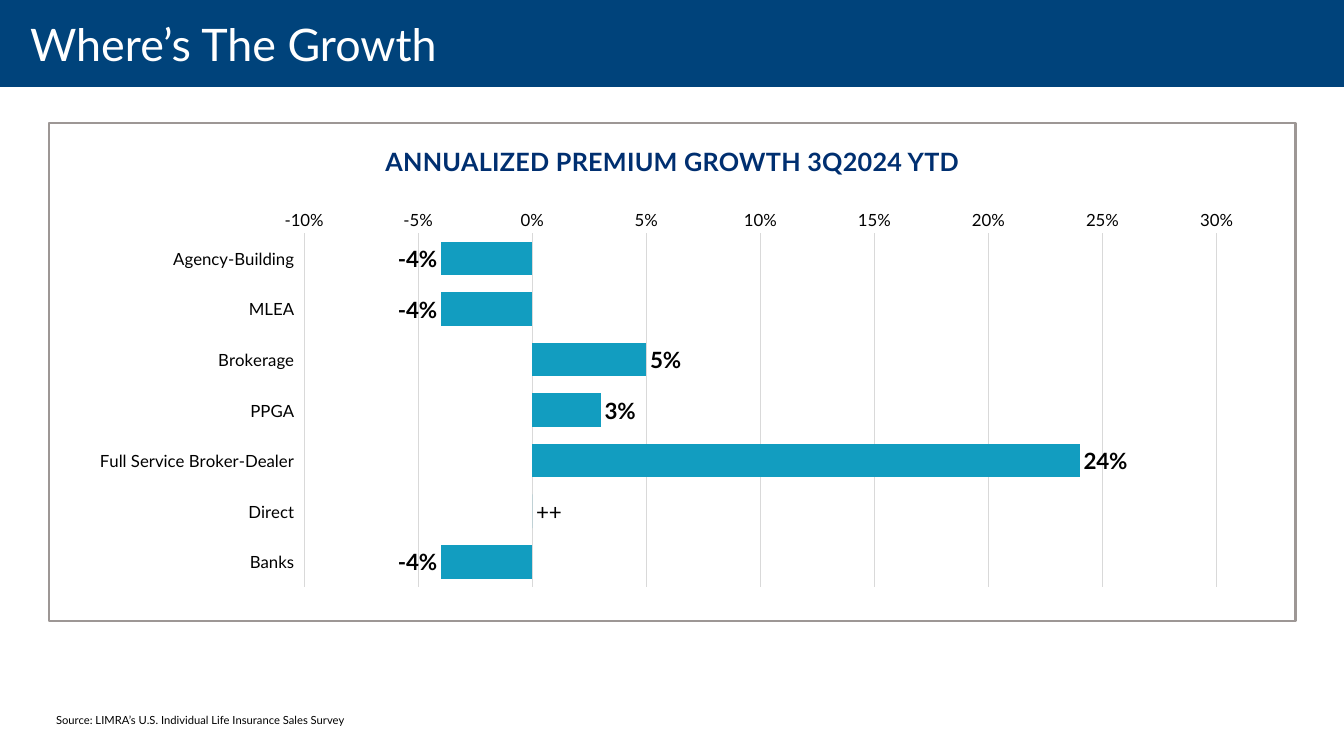
from lxml import etree
from pptx import Presentation
from pptx.chart.data import CategoryChartData
from pptx.dml.color import RGBColor
from pptx.enum.chart import XL_CHART_TYPE as Kind, XL_LABEL_POSITION as Spot
from pptx.enum.chart import XL_TICK_LABEL_POSITION as Place, XL_TICK_MARK as Tick
from pptx.enum.shapes import MSO_SHAPE as Shape
from pptx.enum.text import MSO_ANCHOR as Anchor, MSO_AUTO_SIZE as Fit, PP_ALIGN as Align
from pptx.oxml import parse_xml
from pptx.oxml.ns import nsdecls
from pptx.util import Emu, Pt

HUE = {"navy": "00437B", "ink": "002F70", "teal": "129DC0", "grid": "D9D9D9",
       "edge": "9D9795", "white": "FFFFFF", "black": "000000"}


def px(*sizes):
    """Turn lengths in px (100.8 to the inch) into EMU."""
    return [Emu(round(size * 914400 / 100.8)) for size in sizes]


def style(font, size, hue, bold=False):
    font.name, font.size, font.bold = "Lato", Pt(size), bold
    font.color.rgb = RGBColor.from_string(HUE[hue])


deck = Presentation()
deck.slide_width, deck.slide_height = px(1344, 756)
slide = deck.slides.add_slide(deck.slide_layouts[4])
shapes = slide.shapes
tree = shapes._spTree
title, head, spare, source, extra = slide.placeholders
for holder in (spare, extra):
    tree.remove(holder.element)

# Panel and title band, behind the text
for layer, (box, fill) in enumerate([((49, 123, 1247, 498), "white"),
                                     ((0, 0, 1344, 87), "navy")]):
    rect = shapes.add_shape(Shape.RECTANGLE, *px(*box))
    rect.shadow.inherit = False
    rect.fill.solid()
    rect.fill.fore_color.rgb = RGBColor.from_string(HUE[fill])
    if fill == "white":
        rect.line.color.rgb = RGBColor.from_string(HUE["edge"])
        rect.line.width = Pt(2)
    else:
        rect.line.fill.background()
    tree.insert(2 + layer, rect._element)

# Title, chart heading and source line
for holder, text, box, anchor, align, size, hue, bold in [
    (title, "Where’s The Growth", (0, -5, 1344, 98),
     Anchor.MIDDLE, Align.LEFT, 32, "white", False),
    (head, "ANNUALIZED PREMIUM GROWTH 3Q2024 YTD", (49, 136, 1247, 44),
     Anchor.MIDDLE, Align.CENTER, 18, "ink", True),
    (source, "Source: LIMRA’s U.S. Individual Life Insurance Sales Survey",
     (46, 659, 590, 73), Anchor.BOTTOM, Align.LEFT, 8, "black", False),
]:
    holder.left, holder.top, holder.width, holder.height = px(*box)
    frame = holder.text_frame
    frame.text = text
    frame.auto_size, frame.vertical_anchor = Fit.NONE, anchor
    para = frame.paragraphs[0]
    para.alignment, para.space_before = align, Pt(0)
    style(para.font, size, hue, bold)

frame = title.text_frame
frame.word_wrap = False
frame.margin_left, frame.margin_top, frame.margin_right, frame.margin_bottom = px(30, 0, 20, 0)
para = head.text_frame.paragraphs[0]
para.line_spacing, para.space_after = 1.2, Pt(12.6)
para.runs[0].font._element.set("spc", "20")

# Growth chart
growth = {"Agency-Building": -0.04, "MLEA": -0.04, "Brokerage": 0.05, "PPGA": 0.03,
          "Full Service Broker-Dealer": 0.24, "Direct": 0, "Banks": -0.04}
data = CategoryChartData(number_format="0%")
data.categories = list(growth)
data.add_series("Series 1", list(growth.values()))
chart = shapes.add_chart(Kind.BAR_CLUSTERED, *px(79, 202, 1185, 393), data).chart
chart.has_legend = chart.has_title = False
style(chart.font, 10, "black")

cats, vals = chart.category_axis, chart.value_axis
for axis in (cats, vals):
    axis.major_tick_mark = axis.minor_tick_mark = Tick.NONE
    style(axis.tick_labels.font, 12, "black")
cats.reverse_order = True
cats.tick_label_position = Place.LOW
vals.minimum_scale, vals.maximum_scale, vals.major_unit = -0.1, 0.3, 0.05
vals.tick_labels.number_format = "0%"
vals.tick_labels.number_format_is_linked = False
vals.format.line.fill.background()
for line in (cats.format.line, vals.major_gridlines.format.line):
    line.color.rgb = RGBColor.from_string(HUE["grid"])
    line.width = Pt(0.75)

plot = chart.plots[0]
plot.gap_width, plot.vary_by_categories = 50, False
bars = plot.series[0]
bars.invert_if_negative = False
bars.format.fill.solid()
bars.format.fill.fore_color.rgb = RGBColor.from_string(HUE["teal"])
labels = bars.data_labels
labels.show_value, labels.position = True, Spot.OUTSIDE_END
labels.number_format, labels.number_format_is_linked = "0%", False
style(labels.font, 16, "black", True)
mark = bars.points[list(growth).index("Direct")].data_label
mark.text_frame.text = "++"
style(mark.text_frame.paragraphs[0].runs[0].font, 16, "black")
mark.position = Spot.OUTSIDE_END

# Fixed plot area, as shares of the chart frame
area = chart._chartSpace.chart.plotArea
for old in area.findall("{*}layout"):
    area.remove(old)
layout = parse_xml(f"<c:layout {nsdecls('c')}><c:manualLayout/></c:layout>")
for tag, value in [("layoutTarget", "inner"), ("xMode", "edge"), ("yMode", "edge"),
                   ("x", "0.19"), ("y", "0.08"), ("w", "0.77"), ("h", "0.9")]:
    etree.SubElement(layout[0], f"{{{layout.nsmap['c']}}}{tag}").set("val", value)
area.insert(0, layout)

deck.save("out.pptx")
